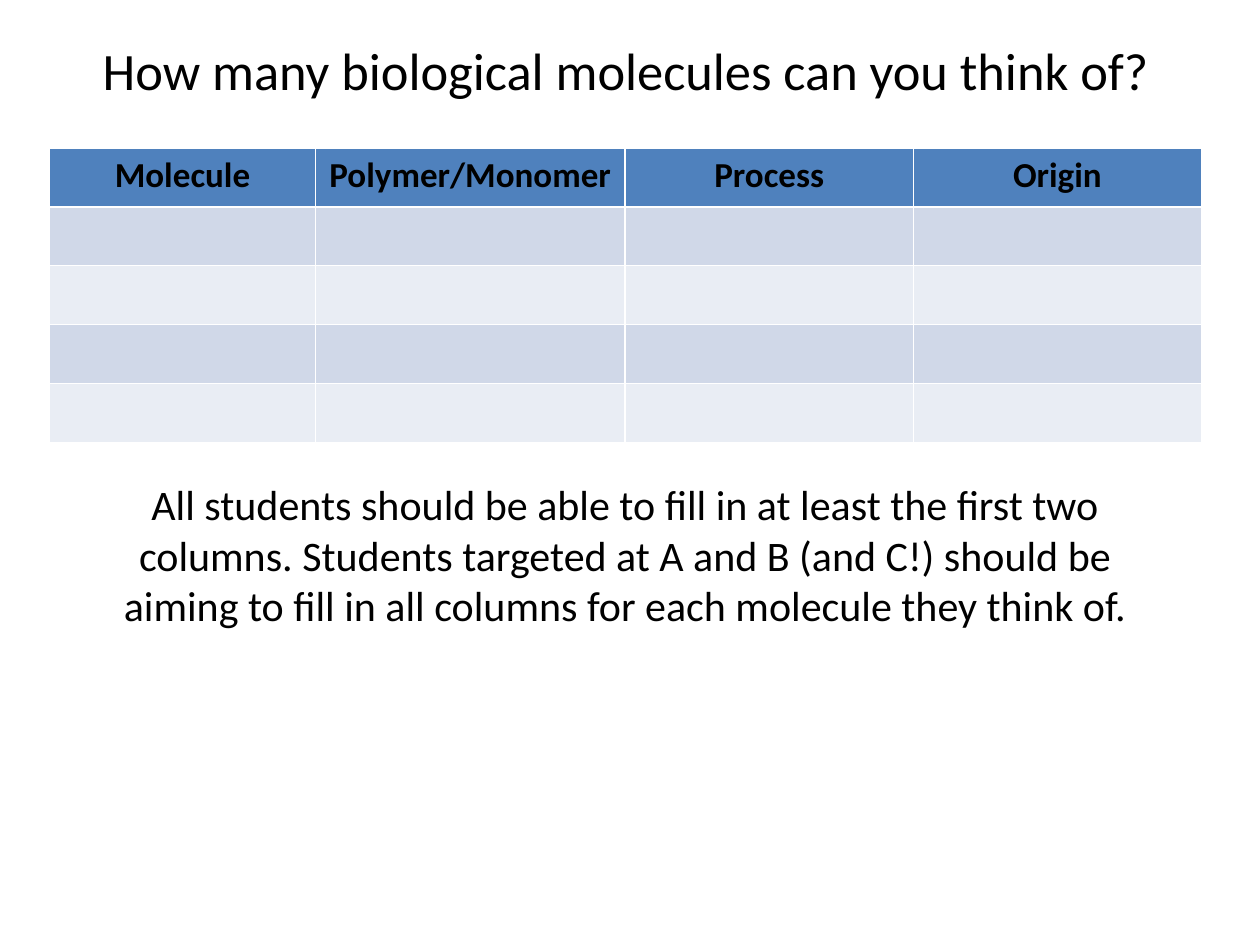
from dataclasses import dataclass

from pptx import Presentation
from pptx.dml.color import RGBColor
from pptx.enum.text import MSO_ANCHOR, MSO_AUTO_SIZE, PP_ALIGN
from pptx.util import Pt

CENTER = PP_ALIGN.CENTER
MIDDLE = MSO_ANCHOR.MIDDLE
GROW = MSO_AUTO_SIZE.SHAPE_TO_FIT_TEXT
NO_FIT = MSO_AUTO_SIZE.NONE

BLACK = RGBColor(0x00, 0x00, 0x00)
HEADER_BLUE = RGBColor(0x4F, 0x81, 0xBD)
BAND_COLORS = (RGBColor(0xD0, 0xD8, 0xE8), RGBColor(0xE9, 0xED, 0xF4))

FONT = "Calibri"
ROW_COUNT = 5
ROW_HEIGHT = 33.7


@dataclass(frozen=True)
class Column:
    heading: str
    width: float


COLUMNS = (
    Column("Molecule", 151.8),
    Column("Polymer/Monomer", 177),
    Column("Process", 164.7),
    Column("Origin", 164.7),
)


def write_centered(frame, text: str, size: float, bold: bool = False) -> None:
    frame.text = text
    paragraph = frame.paragraphs[0]
    paragraph.alignment = CENTER
    font = paragraph.font
    font.name = FONT
    font.size = Pt(size)
    font.bold = bold
    font.color.rgb = BLACK


def fill_cell(cell, color: RGBColor) -> None:
    cell.fill.solid()
    cell.fill.fore_color.rgb = color


def add_title(page, text: str) -> None:
    title = page.shapes.title
    title.left, title.top = Pt(33.8), Pt(11.5)
    title.width, title.height = Pt(648), Pt(57)
    frame = title.text_frame
    frame.auto_size = NO_FIT
    frame.vertical_anchor = MIDDLE
    write_centered(frame, text, 30)


def add_molecule_table(page, columns: tuple[Column, ...]) -> None:
    total_width = sum(column.width for column in columns)
    table = page.shapes.add_table(
        ROW_COUNT, len(columns), Pt(28.4), Pt(84.5),
        Pt(total_width), Pt(ROW_COUNT * ROW_HEIGHT),
    ).table
    for row in table.rows:
        row.height = Pt(ROW_HEIGHT)
    for index, column in enumerate(columns):
        table.columns[index].width = Pt(column.width)
        header = table.cell(0, index)
        fill_cell(header, HEADER_BLUE)
        write_centered(header.text_frame, column.heading, 20, bold=True)
        for row_index in range(1, ROW_COUNT):
            fill_cell(table.cell(row_index, index), BAND_COLORS[(row_index - 1) % 2])


def add_instructions(page, text: str) -> None:
    box = page.shapes.add_textbox(Pt(56.2), Pt(270), Pt(602), Pt(94.5))
    frame = box.text_frame
    frame.word_wrap = True
    frame.auto_size = GROW
    write_centered(frame, text, 24)


def main() -> None:
    deck = Presentation()
    deck.slide_width, deck.slide_height = Pt(720), Pt(540)
    page = deck.slides.add_slide(deck.slide_layouts.get_by_name("Title Only"))
    add_title(page, "How many biological molecules can you think of?")
    add_molecule_table(page, COLUMNS)
    add_instructions(
        page,
        "All students should be able to fill in at least the first two columns. "
        "Students targeted at A and B (and C!) should be aiming to fill in all "
        "columns for each molecule they think of.",
    )
    deck.save("out.pptx")


if __name__ == "__main__":
    main()
